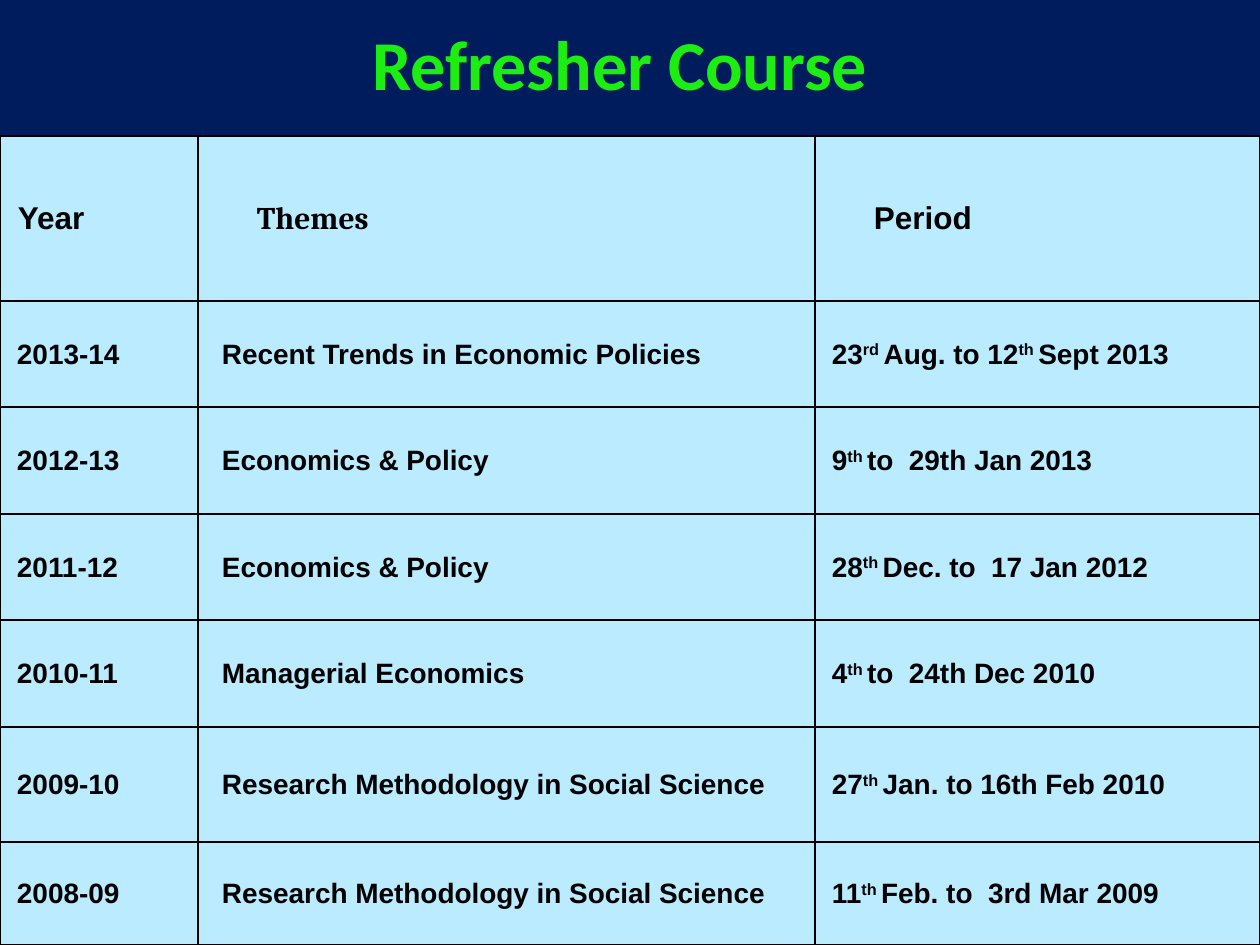
from lxml import etree
from pptx import Presentation
from pptx import util as u
from pptx.dml.color import RGBColor
from pptx.enum import text
from pptx.oxml import ns

PX_PER_INCH = 126
NAVY = RGBColor(0x00, 0x1C, 0x5D)
GREEN = RGBColor(0x1C, 0xEE, 0x12)
PALE_BLUE = RGBColor(0xBA, 0xEB, 0xFF)
BLACK = RGBColor(0, 0, 0)

TITLE_FONT = {"name": "Calibri", "size": u.Pt(40), "bold": True}
HEADER_FONT = {"name": "Arial", "size": u.Pt(18), "bold": True}
THEMES_FONT = {**HEADER_FONT, "name": "Cambria"}
BODY_FONT = {**HEADER_FONT, "size": u.Pt(16)}

COLUMN_WIDTHS = [198, 617, 445]
ROW_HEIGHTS = [165, 106, 107, 106, 107, 115, 103]
HEADER_INDENTS = [18, 59, 59]
BODY_INDENTS = [17, 24, 17]

HEADERS = ["Year", "Themes", "Period"]
# Carets enclose superscript text.
COURSES = [
    ["2013-14", "Recent Trends in Economic Policies",
     "23^rd ^Aug. to 12^th ^Sept 2013"],
    ["2012-13", "Economics & Policy", "9^th ^to  29th Jan 2013"],
    ["2011-12", "Economics & Policy", "28^th ^Dec. to  17 Jan 2012"],
    ["2010-11", "Managerial Economics", "4^th ^to  24th Dec 2010"],
    ["2009-10", "Research Methodology in Social Science",
     "27^th ^Jan. to 16th Feb 2010"],
    ["2008-09", "Research Methodology in Social Science",
     "11^th ^Feb. to  3rd Mar 2009"],
]


def px(n):
    return u.Emu(round(n * u.Inches(1) / PX_PER_INCH))


def add_runs(p, marked, font, color):
    """Write text whose caret-enclosed parts are superscript."""
    for i, part in enumerate(marked.split("^")):
        r = p.add_run()
        r.text = part
        for name, value in font.items():
            setattr(r.font, name, value)
        r.font.color.rgb = color
        if i % 2:
            r.font._element.set("baseline", "30000")


def add_borders(cell):
    tc_pr = cell._tc.get_or_add_tcPr()
    for side in ("a:lnL", "a:lnR", "a:lnT", "a:lnB"):
        ln = etree.SubElement(tc_pr, ns.qn(side), w=str(u.Pt(1)))
        fill = etree.SubElement(ln, ns.qn("a:solidFill"))
        etree.SubElement(fill, ns.qn("a:srgbClr"), val=str(BLACK))


def fill_cell(cell, marked, font, indent):
    layout = {"margin_left": px(indent), "margin_right": px(1),
              "margin_top": px(1), "margin_bottom": 0,
              "vertical_anchor": text.MSO_ANCHOR.MIDDLE}
    for name, value in layout.items():
        setattr(cell, name, value)
    add_borders(cell)
    cell.fill.solid()
    cell.fill.fore_color.rgb = PALE_BLUE
    add_runs(cell.text_frame.paragraphs[0], marked, font, BLACK)


def add_title(s, left, top, width, height):
    tf = s.shapes.add_textbox(px(left), px(top), px(width), px(height)).text_frame
    tf.word_wrap = True
    tf.vertical_anchor = text.MSO_ANCHOR.MIDDLE
    p = tf.paragraphs[0]
    p.alignment = text.PP_ALIGN.CENTER
    add_runs(p, "Refresher Course", TITLE_FONT, GREEN)


def add_course_table(s, left, top, width, height):
    rows = [HEADERS] + COURSES
    table = s.shapes.add_table(len(rows), len(HEADERS), px(left), px(top),
                               px(width), px(height)).table
    for column, w in zip(table.columns, COLUMN_WIDTHS):
        column.width = px(w)
    for row, h in zip(table.rows, ROW_HEIGHTS):
        row.height = px(h)
    header_fonts = [HEADER_FONT, THEMES_FONT, HEADER_FONT]
    for i, entries in enumerate(rows):
        fonts = [BODY_FONT] * len(HEADERS) if i else header_fonts
        indents = BODY_INDENTS if i else HEADER_INDENTS
        for j, entry in enumerate(entries):
            fill_cell(table.cell(i, j), entry, fonts[j], indents[j])


def main():
    prs = Presentation()
    prs.slide_width, prs.slide_height = px(1260), px(945)
    s = prs.slides.add_slide(prs.slide_layouts[6])
    s.background.fill.solid()
    s.background.fill.fore_color.rgb = NAVY
    add_title(s, 53, 0, 1134, 126)
    add_course_table(s, 0, 136, sum(COLUMN_WIDTHS), sum(ROW_HEIGHTS))
    prs.save("out.pptx")


if __name__ == "__main__":
    main()
